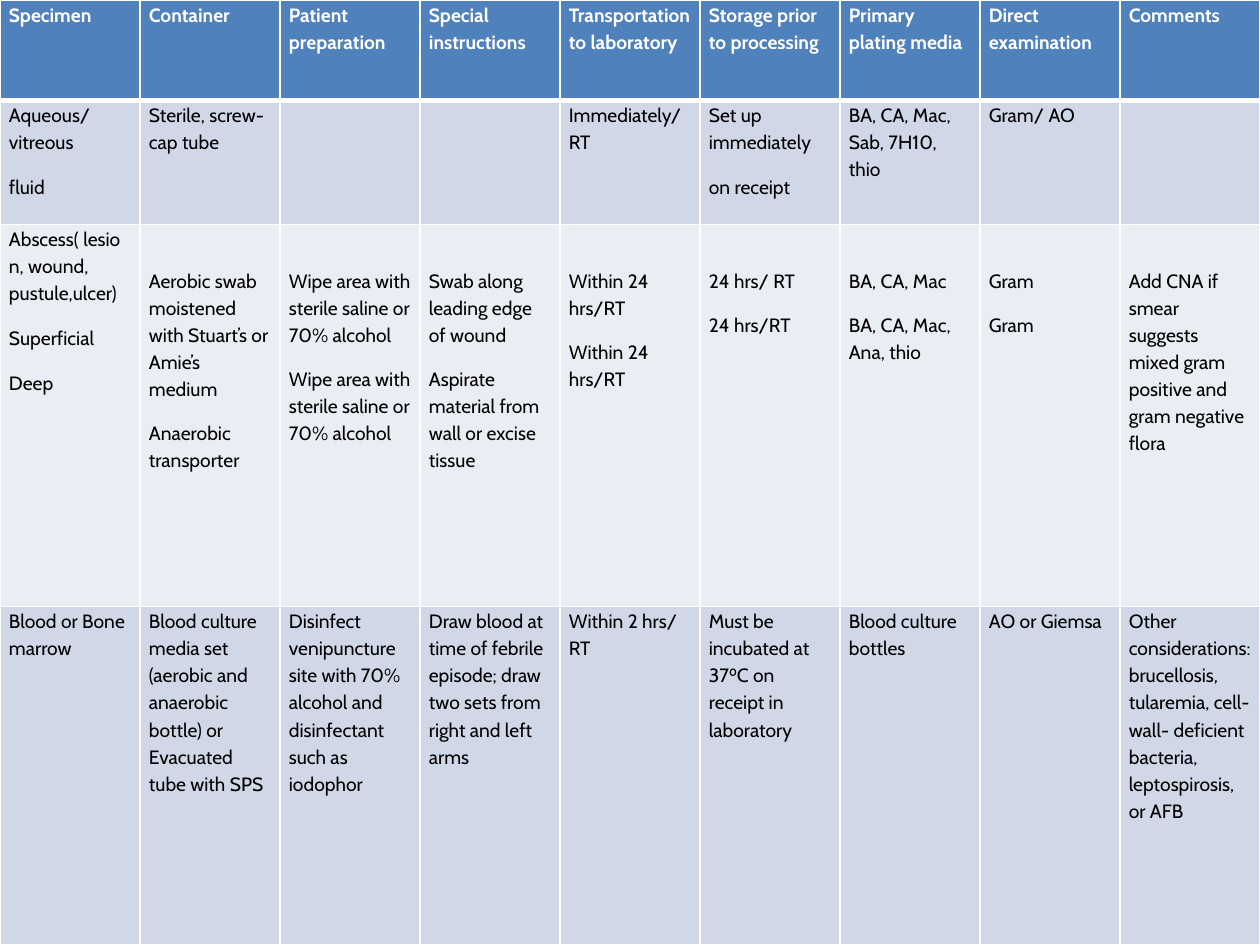
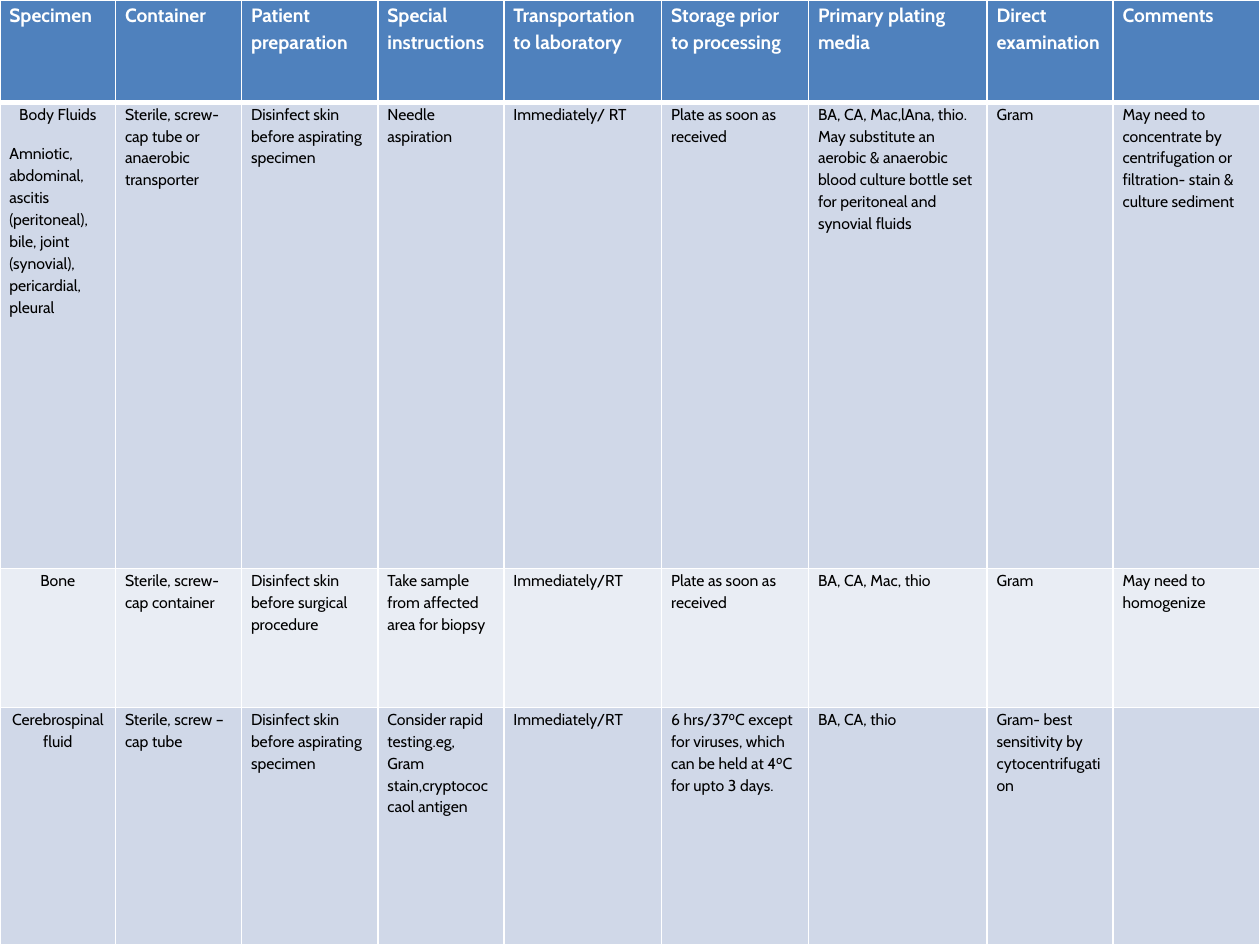
from lxml import etree
from pptx import Presentation
from pptx.dml.color import RGBColor
from pptx.enum.text import PP_ALIGN
from pptx.oxml.ns import qn
from pptx.util import Cm, Pt

LEFT, CENTER = PP_ALIGN.LEFT, PP_ALIGN.CENTER

# Shared look
WIDTH, HEIGHT = 25.4, 19.05
FONT = "Cabin"
WHITE, BLACK = "FFFFFF", "000000"
HEADER_FILL = "4F81BD"
BAND_FILLS = ["E9EDF4", "D0D8E8"]
THIN, THICK = 1, 3
HEADER_SIZE = 11

HEADERS = [
    "Specimen", "Container", "Patient preparation", "Special instructions",
    "Transportation to laboratory", "Storage prior to processing",
    "Primary plating media", "Direct examination", "Comments",
]

# Each cell is one string; a line break starts a new paragraph
GENERAL_SPECIMENS = [
    ["Aqueous/vitreous\nfluid", "Sterile, screw-cap tube", "", "",
     "Immediately/RT", "Set up immediately\non receipt",
     "BA, CA, Mac, Sab, 7H10, thio", "Gram/ AO", ""],
    ["Abscess( lesion, wound, pustule,ulcer)\nSuperficial\nDeep",
     "Aerobic swab moistened with Stuart’s or Amie’s medium\n"
     "Anaerobic transporter",
     "Wipe area with sterile saline or 70% alcohol\n"
     "Wipe area with sterile saline or 70% alcohol",
     "Swab along leading edge of wound\n"
     "Aspirate material from wall or excise tissue",
     "Within 24 hrs/RT\nWithin 24 hrs/RT",
     "24 hrs/ RT\n24 hrs/RT",
     "BA, CA, Mac\nBA, CA, Mac, Ana, thio",
     "Gram\nGram",
     "Add CNA if smear suggests mixed gram positive and gram negative flora"],
    ["Blood or Bone marrow",
     "Blood culture media set (aerobic and anaerobic bottle) or "
     "Evacuated tube with SPS",
     "Disinfect venipuncture site with 70% alcohol and disinfectant "
     "such as iodophor",
     "Draw blood at time of febrile episode; draw two sets from right "
     "and left arms",
     "Within 2 hrs/ RT",
     "Must be incubated at 37⁰C on receipt in laboratory",
     "Blood culture bottles", "AO or Giemsa",
     "Other considerations: brucellosis, tularemia, cell-wall- deficient "
     "bacteria, leptospirosis, or AFB"],
]

FLUID_AND_BONE_SPECIMENS = [
    ["Body Fluids\nAmniotic, abdominal, ascitis (peritoneal), bile, "
     "joint (synovial), pericardial, pleural",
     "Sterile, screw-cap tube or anaerobic transporter",
     "Disinfect skin before aspirating specimen",
     "Needle aspiration", "Immediately/ RT", "Plate as soon as received",
     "BA, CA, Mac,lAna, thio. May substitute an aerobic & anaerobic blood "
     "culture bottle set for peritoneal and synovial fluids",
     "Gram",
     "May need to concentrate by centrifugation or filtration- stain & "
     "culture sediment"],
    ["Bone", "Sterile, screw-cap container",
     "Disinfect skin before surgical procedure",
     "Take sample from affected area for biopsy",
     "Immediately/RT", "Plate as soon as received",
     "BA, CA, Mac, thio", "Gram", "May need to homogenize"],
    ["Cerebrospinal fluid", "Sterile, screw –cap tube",
     "Disinfect skin before aspirating specimen",
     "Consider rapid testing.eg, Gram stain,cryptococcaol antigen",
     "Immediately/RT",
     "6 hrs/37⁰C except for viruses, which can be held at 4⁰C for "
     "upto 3 days.",
     "BA, CA, thio",
     "Gram- best sensitivity by cytocentrifugation", ""],
]


def rgb(hex_color):
    return RGBColor.from_string(hex_color)


def set_all(obj, values):
    for name, value in values.items():
        setattr(obj, name, value)


def add_borders(cell, top, bottom):
    """White cell borders; must come before the fill in the cell's XML."""
    tc_pr = cell._tc.get_or_add_tcPr()
    for side, width in {"L": THIN, "R": THIN, "T": top, "B": bottom}.items():
        ln = etree.SubElement(tc_pr, qn("a:ln" + side), w=str(Pt(width)))
        fill = etree.SubElement(ln, qn("a:solidFill"))
        etree.SubElement(fill, qn("a:srgbClr"), val=WHITE)


def write_cell(cell, text, size, color, bold, align):
    for i, line in enumerate(text.split("\n")):
        tf = cell.text_frame
        p = tf.add_paragraph() if i else tf.paragraphs[0]
        set_all(p, {"line_spacing": 1.15, "space_after": Pt(10),
                    "alignment": LEFT if i else align})
        set_all(p.font, {"name": FONT, "size": Pt(size), "bold": bold})
        p.font.color.rgb = rgb(color)
        if line:
            p.add_run().text = line


def add_specimen_table(prs, rows, widths, heights, size, margin,
                       first_align=LEFT, lowered_row=None):
    """Full-slide table; lowered_row drops all but its first cell one line."""
    s = prs.slides.add_slide(prs.slide_layouts[6])
    table = s.shapes.add_table(len(heights), len(widths), 0, 0,
                               Cm(WIDTH), Cm(HEIGHT)).table
    set_all(table, {"first_row": False, "horz_banding": False})
    for column, width in zip(table.columns, widths):
        column.width = Cm(width)
    for row, height in zip(table.rows, heights):
        row.height = Cm(height)

    for r, texts in enumerate([HEADERS] + rows):
        header = r == 0
        for c, text in enumerate(texts):
            cell = table.cell(r, c)
            lowered = r == lowered_row and c > 0
            set_all(cell, {"margin_left": Cm(margin),
                           "margin_right": Cm(margin),
                           "margin_top": Cm(0.83 if lowered else 0),
                           "margin_bottom": 0})
            add_borders(cell, THICK if r == 1 else THIN,
                        THICK if header else THIN)
            cell.fill.solid()
            cell.fill.fore_color.rgb = rgb(
                HEADER_FILL if header else BAND_FILLS[r % 2])
            write_cell(cell, text,
                       HEADER_SIZE if header else size,
                       WHITE if header else BLACK, header,
                       first_align if c == 0 and not header else LEFT)


def main():
    prs = Presentation()
    set_all(prs, {"slide_width": Cm(WIDTH), "slide_height": Cm(HEIGHT)})

    # Eye fluid, abscess, blood
    count = len(HEADERS)
    add_specimen_table(prs, GENERAL_SPECIMENS, [WIDTH / count] * count,
                       [2.03, 2.5, 7.7, 6.82], size=11, margin=0.18,
                       lowered_row=2)

    # Body fluids, bone, cerebrospinal fluid
    add_specimen_table(prs, FLUID_AND_BONE_SPECIMENS,
                       [2.33, 2.54, 2.75, 2.54, 3.18, 2.96, 3.6, 2.54, 2.96],
                       [2.06, 9.4, 2.8, 4.79], size=9, margin=0.19,
                       first_align=CENTER)

    prs.save("out.pptx")


if __name__ == "__main__":
    main()
